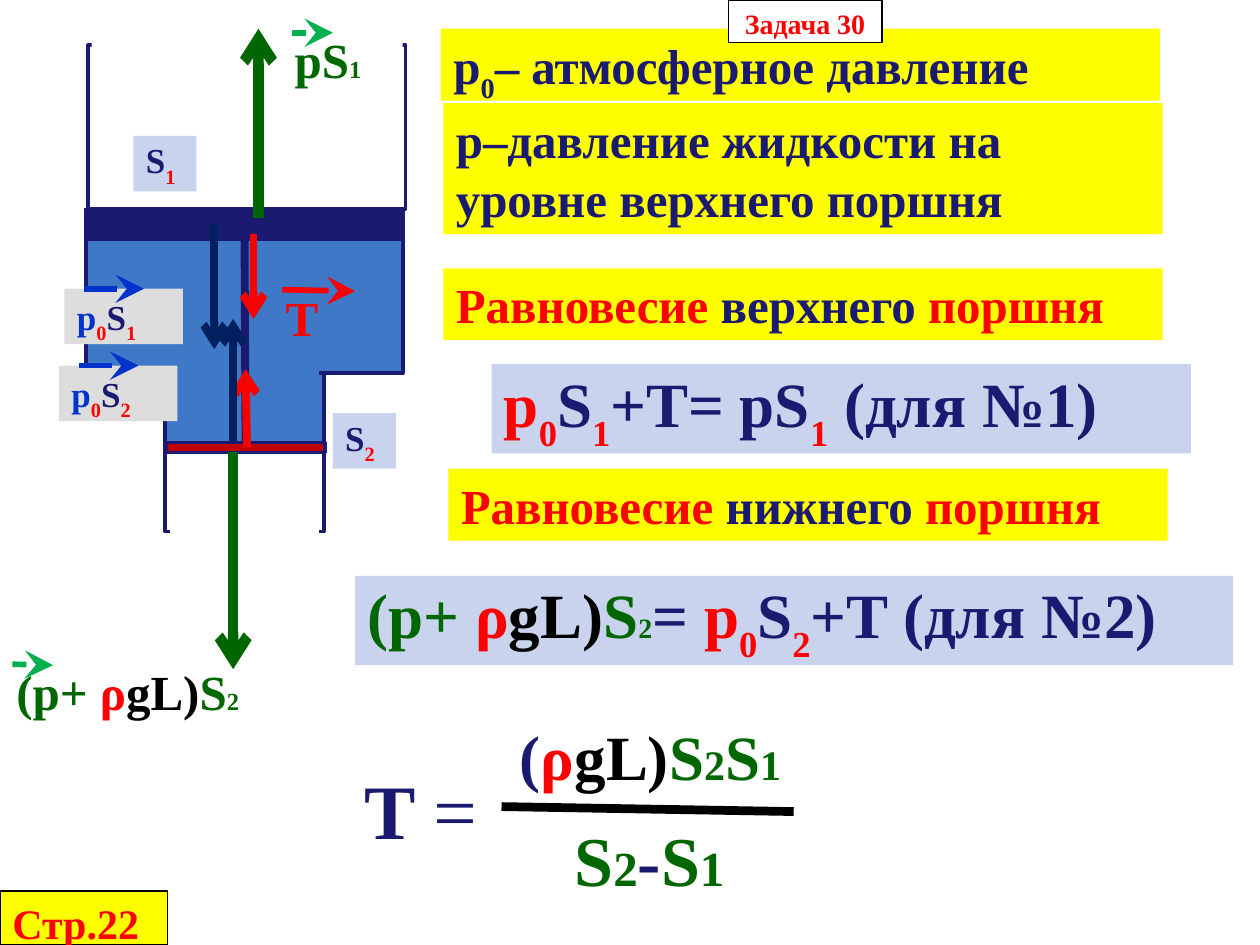
from dataclasses import dataclass

from lxml import etree
from pptx import Presentation
from pptx.dml.color import RGBColor as Rgb
from pptx.enum.shapes import MSO_CONNECTOR as Link, MSO_SHAPE as Preset
from pptx.enum.text import MSO_ANCHOR as Anchor, MSO_AUTO_SIZE as Fit, PP_ALIGN as Align
from pptx.oxml.ns import qn
from pptx.util import Cm, Pt


@dataclass(frozen=True)
class Theme:
    font: str = "Times New Roman"
    navy: str = "1A1A70"
    dark: str = "002060"
    water: str = "3E78C6"
    maroon: str = "C00000"
    red: str = "FF0000"
    tension: str = "F90101"
    green: str = "006600"
    lime: str = "00B050"
    blue: str = "0033CC"
    black: str = "000000"
    white: str = "FFFFFF"
    yellow: str = "FFFF00"
    pale: str = "C9D3ED"
    grey: str = "DDDDDD"
    tiny: int = 14
    small: int = 16
    label: int = 20
    medium: int = 24
    body: int = 28
    formula: int = 36
    denominator: int = 40
    large: int = 44


THEME = Theme()


def write_span(para, text, *, size, color=THEME.navy, bold=True, sub=False):
    span = para.add_run()
    span.text = text
    span.font.name = THEME.font
    span.font.size = Pt(size)
    span.font.bold = bold
    span.font.color.rgb = Rgb.from_string(color)
    if sub:
        span.font._element.set("baseline", "-30000")


def red(text, **look):
    return text, dict(color=THEME.red, **look)


def green(text, **look):
    return text, dict(color=THEME.green, **look)


def navy(text, **look):
    return text, dict(color=THEME.navy, **look)


def area(index):
    return [navy("S"), red(index, sub=True)]


def air_force(index, color):
    return [("p", dict(color=color)), red("0", sub=True), *area(index)]


def liquid_force(index_size):
    return [green("(p+"), red(" ρ"), ("gL)", dict(color=THEME.black)),
            green("S"), green("2", size=index_size)]


class Board:
    def __init__(self, page, theme):
        self.page = page
        self.theme = theme
        self.target = page.shapes

    def start_group(self):
        self.target = self.page.shapes.add_group_shape().shapes

    def end_group(self):
        self.target = self.page.shapes

    def paint(self, shape, fill, line=None, width=0.75):
        shape.fill.solid()
        shape.fill.fore_color.rgb = Rgb.from_string(fill)
        if line:
            shape.line.color.rgb = Rgb.from_string(line)
            shape.line.width = Pt(width)
        else:
            shape.line.fill.background()

    def box(self, place, fill, line=None, width=2):
        box = self.target.add_shape(Preset.RECTANGLE, *map(Cm, place))
        box.shadow.inherit = False
        self.paint(box, fill, line, width)
        return box

    def fill_text(self, shape, spans, size, align=Align.LEFT, anchor=Anchor.TOP, grow=True):
        frame = shape.text_frame
        frame.word_wrap = True
        frame.auto_size = Fit.SHAPE_TO_FIT_TEXT if grow else Fit.NONE
        frame.vertical_anchor = anchor
        frame.margin_left = frame.margin_right = Cm(0.25)
        frame.margin_top = frame.margin_bottom = Cm(0.13)
        para = frame.paragraphs[0]
        para.alignment = align
        for text, look in spans:
            write_span(para, text, **{"size": size, **look})

    def text(self, place, spans, size):
        self.fill_text(self.target.add_textbox(*map(Cm, place)), spans, size)

    def panel(self, place, fill, spans, size, anchor=Anchor.TOP):
        self.fill_text(self.box(place, fill), spans, size, anchor=anchor)

    def title(self, place, spans, size):
        title = self.page.shapes.title
        title.left, title.top, title.width, title.height = map(Cm, place)
        self.paint(title, self.theme.white, self.theme.black)
        self.fill_text(title, spans, size, align=Align.CENTER, grow=False)
        title.element.getparent().append(title.element)

    def line(self, ends, color, width, head=None, head_size="med"):
        line = self.target.add_connector(Link.STRAIGHT, *map(Cm, ends))
        line.line.color.rgb = Rgb.from_string(color)
        line.line.width = Pt(width)
        if head:
            etree.SubElement(line.line._get_or_add_ln(), qn("a:tailEnd"),
                             type=head, w=head_size, len=head_size)
        etree.SubElement(line.element.spPr, qn("a:effectLst"))
        return line

    def vector_label(self, place, spans, size, ends, color, fill=None):
        self.start_group()
        if fill:
            self.panel(place, fill, spans, size)
        else:
            self.text(place, spans, size)
        self.line(ends, color, 3.25, "stealth", "lg")
        self.end_group()


def draw_vessel(board):
    t = board.theme
    board.start_group()
    board.box((1.73, 4.22, 6.4, 3.3), t.water, t.navy)
    board.box((3.33, 7.52, 3.2, 1.6), t.water, t.navy)
    upper_piston = board.box((1.73, 4.22, 6.4, 0.61), t.navy, t.navy)
    lower_piston = board.box((3.35, 8.92, 3.2, 0.2), t.maroon, t.navy)
    board.box((1.78, 0.91, 6.4, 3.3), t.white, t.navy)
    board.box((3.33, 9.12, 3.2, 1.6), t.white, t.navy)
    board.box((3.43, 7.24, 3, 0.56), t.water)
    board.box((3.43, 10.46, 3, 0.56), t.white)
    board.box((1.85, 0.64, 6.27, 0.56), t.white)
    board.end_group()
    for index, left, top in (("1", 2.69, 2.74), ("2", 6.71, 8.33)):
        board.panel((left, top, 1.27, 1.12), t.pale, area(index), t.label, Anchor.MIDDLE)
    rod = board.line((4.93, 4.83, 4.95, 8.92), t.navy, 4.5)
    rod.begin_connect(upper_piston, 2)
    rod.end_connect(lower_piston, 0)


def draw_forces(board):
    t = board.theme
    for ends, color, width in (
        ((5.11, 4.72, 5.11, 6.43), t.tension, 4.5),
        ((4.98, 9.02, 4.95, 7.44), t.tension, 4.5),
        ((5.21, 4.39, 5.21, 0.58), t.green, 6),
        ((4.7, 9.12, 4.7, 13.49), t.green, 6),
        ((4.32, 4.52, 4.32, 7.04), t.dark, 4.5),
        ((4.7, 8.89, 4.7, 6.43), t.dark, 4.5),
    ):
        board.line(ends, color, width, "arrow")
    board.vector_label((5.51, 5.66, 2.29, 1.45), [red("T")], t.body,
                       (5.69, 5.84, 7.16, 5.87), t.red)
    board.vector_label((5.69, 0.46, 2.77, 1.45), [green("pS"), green("1", size=t.tiny)],
                       t.body, (5.89, 0.66, 6.71, 0.66), t.lime)
    board.vector_label((0.08, 13.21, 5.82, 1.45), liquid_force(t.tiny), t.body,
                       (0.25, 13.39, 1.07, 13.41), t.lime)
    for index, left, top in (("1", 1.3, 5.82), ("2", 1.19, 7.37)):
        board.vector_label((left, top, 2.39, 1.12), air_force(index, t.blue), t.label,
                           (left + 0.4, top, left + 1.6, top), t.blue, t.grey)


def write_solution(board):
    t = board.theme
    for left, top, height, spans in (
        (8.94, 5.41, 1.45, [red("Равновесие "), navy("верхнего "), red("поршня")]),
        (8.89, 0.58, 1.45, [navy("p"), navy("0", sub=True), navy("– атмосферное давление")]),
        (8.94, 2.08, 2.64, [navy("p–давление жидкости на уровне верхнего поршня")]),
        (9.04, 9.45, 1.45, [red("Равновесие "), navy("нижнего "), red("поршня")]),
    ):
        board.panel((left, top, 14.5, height), t.yellow, spans, t.body)
    upper = [*air_force("1", t.red), navy("+T= pS"), red("1", sub=True), navy(" (для №1)")]
    lower = [*liquid_force(t.small), navy("= "), *air_force("2", t.red), navy("+T (для №2)")]
    board.panel((9.91, 7.34, 14.1, 1.8), t.pale, upper, t.formula, Anchor.MIDDLE)
    board.panel((7.16, 11.61, 17.7, 1.8), t.pale, lower, t.formula, Anchor.MIDDLE)

    board.text((7.09, 15.24, 3.43, 2.13), [navy("T "), navy("=", bold=False)], t.large)
    board.text((10.23, 14.33, 6.48, 1.8),
               [navy("("), red("ρ"), ("gL)", dict(color=t.black)),
                green("S"), green("2", size=t.medium),
                green("S"), green("1", size=t.medium)], t.formula)
    board.text((11.33, 16.33, 4.17, 2.13),
               [green("S"), green("2", size=t.body), navy("-"),
                green("S"), green("1", size=t.body)], t.denominator)
    board.line((10.11, 16.26, 16, 16.36), t.black, 5)


def main():
    deck = Presentation()
    deck.slide_width, deck.slide_height = Cm(25.4), Cm(19.05)
    board = Board(deck.slides.add_slide(deck.slide_layouts[5]), THEME)
    draw_vessel(board)
    draw_forces(board)
    write_solution(board)
    board.title((14.68, 0, 3.1, 0.86), [red("Задача 30")], THEME.small)
    page_box = board.box((0, 17.96, 3.38, 1.09), THEME.yellow, THEME.black, 0.75)
    board.fill_text(page_box, [red("Стр.22")], THEME.medium, grow=False)
    deck.save("out.pptx")


if __name__ == "__main__":
    main()
